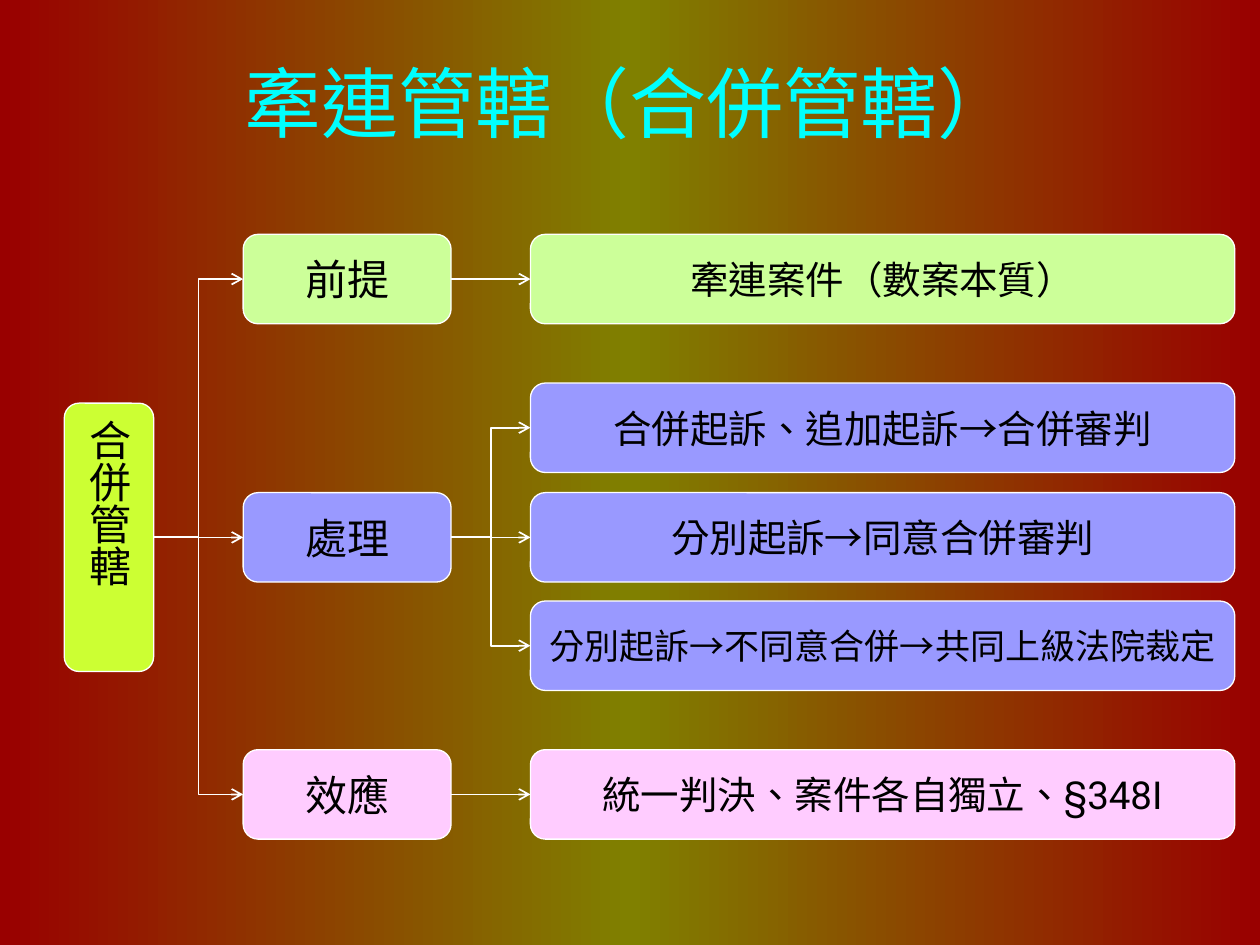
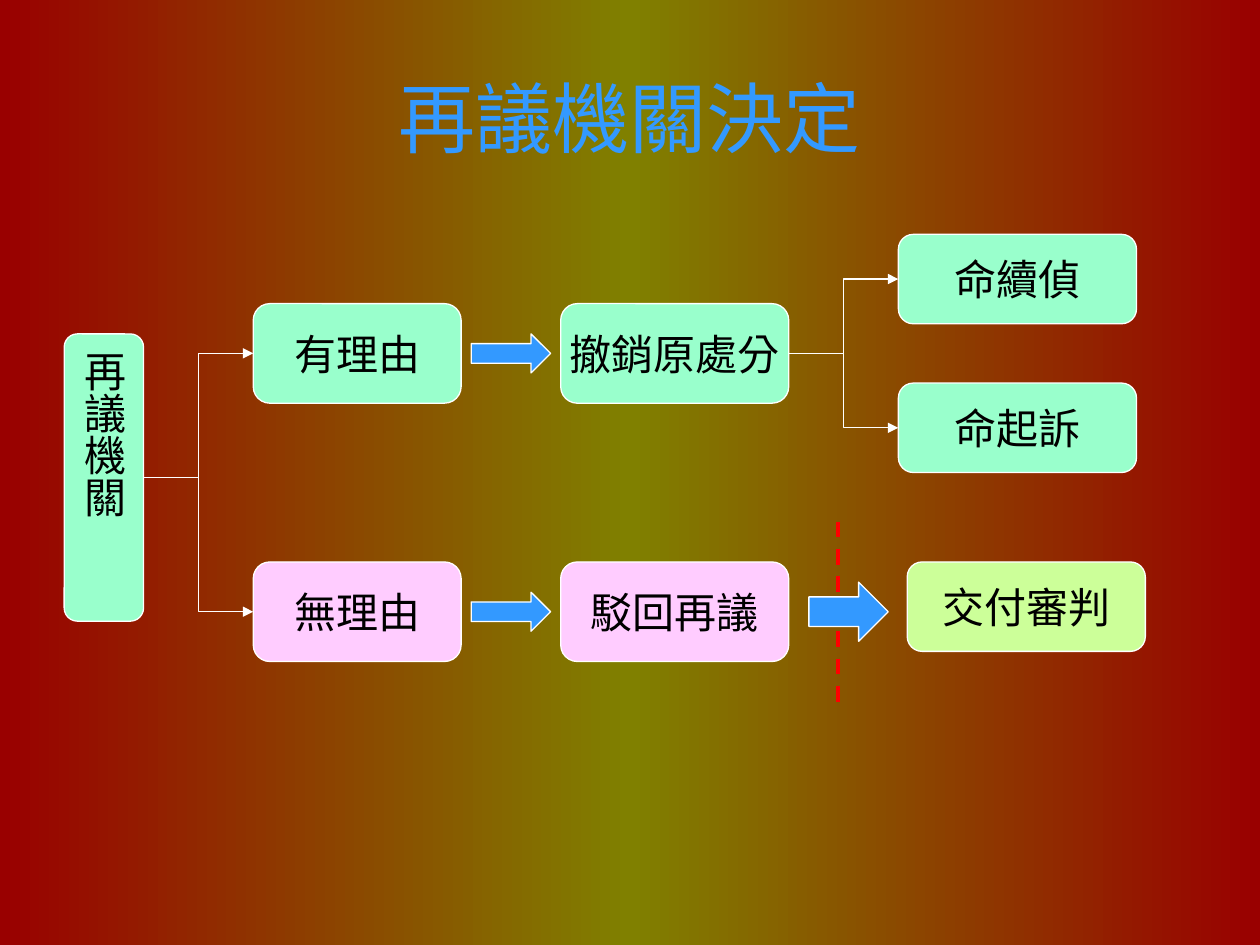
from dataclasses import dataclass

from pptx import Presentation
from pptx.dml.color import RGBColor
from pptx.enum.dml import MSO_LINE
from pptx.enum.shapes import MSO_CONNECTOR, MSO_SHAPE
from pptx.enum.text import MSO_ANCHOR, MSO_AUTO_SIZE, PP_ALIGN
from pptx.oxml.ns import qn
from pptx.oxml.xmlchemy import OxmlElement
from pptx.util import Inches, Pt

STRAIGHT, ELBOW = MSO_CONNECTOR.STRAIGHT, MSO_CONNECTOR.ELBOW
ROUNDED = MSO_SHAPE.ROUNDED_RECTANGLE
PROCESS = MSO_SHAPE.FLOWCHART_ALTERNATE_PROCESS
RIGHT_ARROW = MSO_SHAPE.RIGHT_ARROW
CENTER, MIDDLE = PP_ALIGN.CENTER, MSO_ANCHOR.MIDDLE
LEFT_SIDE, RIGHT_SIDE = 1, 3
TITLE_ONLY = 5


@dataclass(frozen=True)
class Theme:
    edge: str = "990000"
    olive: str = "808000"
    ink: str = "000000"
    line: str = "FFFFFF"
    lime: str = "CCFF33"
    green: str = "CCFF99"
    mint: str = "99FFCC"
    violet: str = "9999FF"
    pink: str = "FFCCFF"
    blue: str = "3399FF"
    cyan: str = "00FFFF"
    red: str = "FF0000"
    title_size: int = 44
    label_size: int = 24
    detail_size: int = 22
    long_size: int = 20
    outline: float = 0.75
    body_font: str = "Roboto"
    title_font: str = "Arial"
    asian_font: str = "Noto Sans CJK JP"


THEME = Theme()


def rgb(value):
    return RGBColor.from_string(value)


def write(frame, text, *, size, color, font, wrap=True, vertical=False):
    frame.auto_size = MSO_AUTO_SIZE.NONE
    frame.word_wrap = wrap
    frame.vertical_anchor = MIDDLE
    frame.margin_left = frame.margin_right = Inches(0.05)
    if vertical:
        frame._txBody.find(qn("a:bodyPr")).set("vert", "eaVert")
    para = frame.paragraphs[0]
    para.alignment = CENTER
    span = para.add_run()
    span.text = text
    span.font.size = Pt(size)
    span.font.color.rgb = rgb(color)
    span.font.name = font
    properties = span._r.get_or_add_rPr()
    properties.set("lang", "zh-TW")
    asian = OxmlElement("a:ea")
    asian.set("typeface", THEME.asian_font)
    properties.find(qn("a:latin")).addnext(asian)


class Builder:
    def __init__(self, theme):
        self.theme = theme
        self.slide = None
        self.deck = Presentation()
        self.deck.slide_width, self.deck.slide_height = Inches(10), Inches(7.5)
        self.paint_background()

    def paint_background(self):
        master = self.deck.slide_master
        fill = master.background.fill
        fill.gradient()
        fill.gradient_angle = 0
        stop_list = master._element.find(".//" + qn("a:gsLst"))
        stop_list.append(OxmlElement("a:gs"))
        colors = (self.theme.edge, self.theme.olive, self.theme.edge)
        for index, (stop, color) in enumerate(zip(stop_list, colors)):
            for child in list(stop):
                stop.remove(child)
            stop.set("pos", str(index * 50000))
            value = OxmlElement("a:srgbClr")
            value.set("val", color)
            stop.append(value)

    def add_slide(self, title, height, color, font):
        layout = self.deck.slide_layouts[TITLE_ONLY]
        self.slide = self.deck.slides.add_slide(layout)
        holder = self.slide.shapes.title
        holder.left, holder.top = Inches(0.5), Inches(0.3)
        holder.width, holder.height = Inches(9), Inches(height)
        write(holder.text_frame, title, size=self.theme.title_size, color=color, font=font)

    def shape(self, kind, left, top, width, height, fill):
        shape = self.slide.shapes.add_shape(
            kind, Inches(left), Inches(top), Inches(width), Inches(height))
        shape.shadow.inherit = False
        shape.fill.solid()
        shape.fill.fore_color.rgb = rgb(fill)
        shape.line.color.rgb = rgb(self.theme.line)
        shape.line.width = Pt(self.theme.outline)
        return shape

    def box(self, text, left, top, width, height, fill, kind=ROUNDED, size=None, vertical=False):
        box = self.shape(kind, left, top, width, height, fill)
        write(box.text_frame, text, size=size or self.theme.label_size, color=self.theme.ink,
              font=self.theme.body_font, wrap=kind == ROUNDED, vertical=vertical)
        return box

    def arrow(self, left, top, width, height):
        self.shape(RIGHT_ARROW, left, top, width, height, self.theme.blue)

    def line(self, kind, start, end, color, width):
        line = self.slide.shapes.add_connector(kind, *start, *end)
        line.line.color.rgb = rgb(color)
        line.line.width = Pt(width)
        line._element.spPr.append(OxmlElement("a:effectLst"))
        return line

    def join(self, source, targets, width, head):
        """Connect the right side of source to the left side of each target."""
        for target in targets:
            rise = target.top + target.height / 2 - source.top - source.height / 2
            kind = STRAIGHT if abs(rise) < Inches(0.02) else ELBOW
            line = self.line(kind, (0, 0), (0, 0), self.theme.line, width)
            line.begin_connect(source, RIGHT_SIDE)
            line.end_connect(target, LEFT_SIDE)
            tail = OxmlElement("a:tailEnd")
            tail.set("type", head)
            line.line._get_or_add_ln().append(tail)

    def dashed_line(self, x, top, bottom):
        line = self.line(STRAIGHT, (Inches(x), Inches(top)), (Inches(x), Inches(bottom)),
                         self.theme.red, 2.25)
        line.line.dash_style = MSO_LINE.DASH


def build_joint_jurisdiction(builder):
    theme = builder.theme
    builder.add_slide("牽連管轄（合併管轄）", 1.01, theme.cyan, theme.asian_font)
    root = builder.box("合併管轄", 0.51, 3.2, 0.71, 2.13, theme.lime, vertical=True)
    row_height = 0.71
    normal, small = theme.detail_size, theme.long_size
    branches = [
        ("前提", 1.86, theme.green, [("牽連案件（數案本質）", 1.86, normal)]),
        ("處理", 3.91, theme.violet, [
            ("合併起訴、追加起訴→合併審判", 3.04, normal),
            ("分別起訴→同意合併審判", 3.91, normal),
            ("分別起訴→不同意合併→共同上級法院裁定", 4.77, small),
        ]),
        ("效應", 5.95, theme.pink, [("統一判決、案件各自獨立、§348I", 5.95, normal)]),
    ]
    stages = []
    for label, top, fill, details in branches:
        stage = builder.box(label, 1.93, top, 1.65, row_height, fill)
        boxes = [builder.box(text, 4.21, detail_top, 5.59, row_height, fill, size=size)
                 for text, detail_top, size in details]
        builder.join(stage, boxes, 1, "arrow")
        stages.append(stage)
    builder.join(root, stages, 1, "arrow")


def build_review_decision(builder):
    theme = builder.theme
    builder.add_slide("再議機關決定", 1.25, theme.blue, theme.title_font)
    root = builder.box("再議機關", 0.51, 2.65, 0.63, 2.28, theme.mint, PROCESS, vertical=True)
    rows = [
        ("有理由", "撤銷原處分", 2.41, theme.mint),
        ("無理由", "駁回再議", 4.46, theme.pink),
    ]
    findings, results = [], []
    for finding, result, top, fill in rows:
        findings.append(builder.box(finding, 2.01, top, 1.65, 0.79, fill, PROCESS))
        results.append(builder.box(result, 4.45, top, 1.81, 0.79, fill, PROCESS))
        builder.arrow(3.74, top + 0.24, 0.63, 0.31)
    orders = [builder.box(text, 7.13, top, 1.89, 0.71, theme.mint, PROCESS)
              for text, top in (("命續偵", 1.86), ("命起訴", 3.04))]
    builder.box("交付審判", 7.2, 4.46, 1.89, 0.71, theme.green, PROCESS)
    builder.dashed_line(6.65, 4.14, 5.64)
    builder.arrow(6.42, 4.62, 0.63, 0.47)
    builder.join(root, findings, theme.outline, "triangle")
    builder.join(results[0], orders, theme.outline, "triangle")


def main():
    builder = Builder(THEME)
    build_joint_jurisdiction(builder)
    build_review_decision(builder)
    builder.deck.save("out.pptx")


if __name__ == "__main__":
    main()
